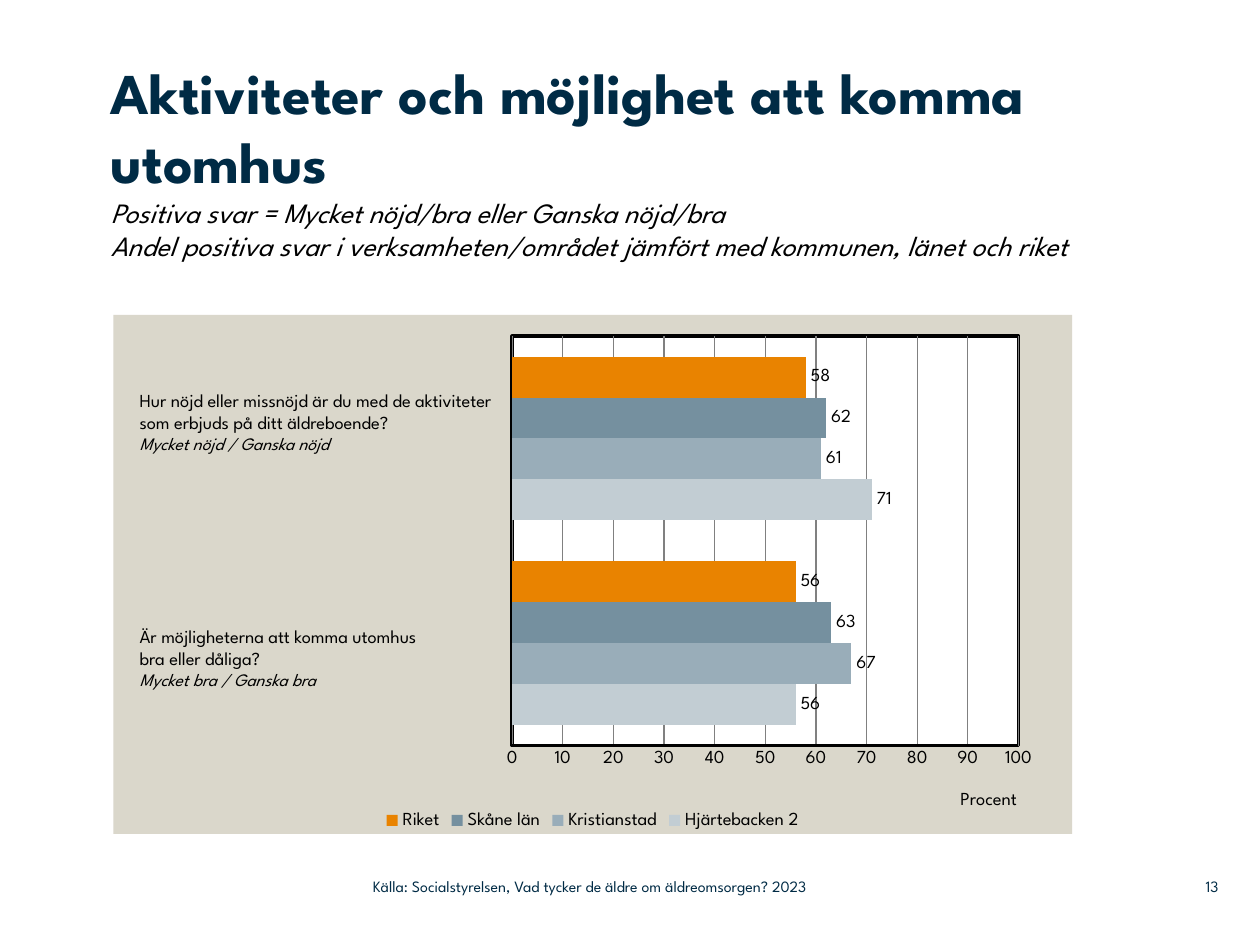
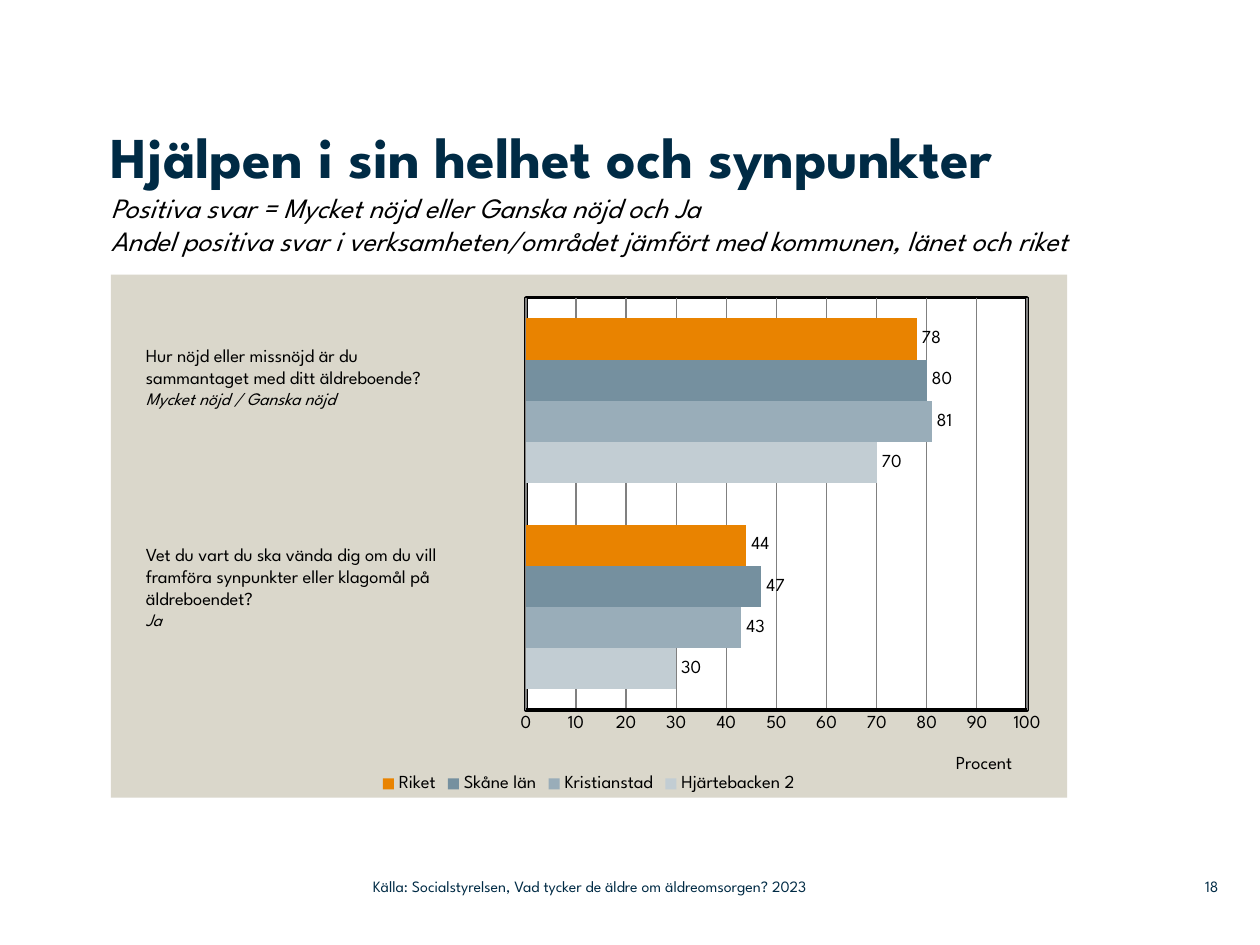
"""Builds two survey slides on elderly care, each with a bar chart."""
import pptx
import pptx.chart.data
import pptx.dml.color
import pptx.enum.chart
import pptx.enum.text
import pptx.oxml
import pptx.oxml.ns
import pptx.util

RGB = pptx.dml.color.RGBColor
NAVY = RGB(0x00, 0x2B, 0x45)
BLACK = RGB(0x00, 0x00, 0x00)
WHITE = RGB(0xFF, 0xFF, 0xFF)
SAND = RGB(0xDA, 0xD7, 0xCB)
GREY = RGB(0x80, 0x80, 0x80)
ORANGE = RGB(0xE9, 0x83, 0x00)
SLATE = RGB(0x75, 0x90, 0x9F)
STEEL = RGB(0x99, 0xAD, 0xB9)
MIST = RGB(0xC2, 0xCD, 0xD3)

FONT = "League Spartan"
AREAS = [("Hjärtebacken 2", MIST), ("Kristianstad", STEEL),
         ("Skåne län", SLATE), ("Riket", ORANGE)]
SOURCE = "Källa: Socialstyrelsen, Vad tycker de äldre om äldreomsorgen? 2023"
SCOPE = "Andel positiva svar i verksamheten/området jämfört med kommunen, länet och riket"
TOP = pptx.enum.text.MSO_ANCHOR.TOP
MID = pptx.enum.text.MSO_ANCHOR.MIDDLE
LEFT = pptx.enum.text.PP_ALIGN.LEFT
RIGHT = pptx.enum.text.PP_ALIGN.RIGHT

deck = pptx.Presentation()
deck.slide_width = pptx.util.Inches(10)
deck.slide_height = pptx.util.Inches(7.5)
COL = deck.slide_width / 100
ROW = deck.slide_height / 100


def place(box):
    """Turn a box in percent of the slide into lengths."""
    return [round(part * unit) for part, unit in zip(box, (COL, ROW, COL, ROW))]


def write(slide, box, lines, color=BLACK, anchor=TOP, align=LEFT, inset=0):
    """Add a text box; each line is its text, size and style letters."""
    frame = slide.shapes.add_textbox(*place(box)).text_frame
    frame.word_wrap = True
    frame.vertical_anchor = anchor
    frame.margin_left = frame.margin_right = pptx.util.Inches(inset)
    frame.margin_top = frame.margin_bottom = pptx.util.Inches(inset / 2)
    for num, (text, size, style) in enumerate(lines):
        para = frame.add_paragraph() if num else frame.paragraphs[0]
        para.alignment = align
        run = para.add_run()
        run.text = text
        run.font.name = FONT
        run.font.size = pptx.util.Pt(size)
        run.font.bold = "b" in style
        run.font.italic = "i" in style
        run.font.color.rgb = NAVY if "b" in style else color


PAGES = [
    {"page": "13",
     "title": "Aktiviteter och möjlighet att komma utomhus",
     "note": "Positiva svar = Mycket nöjd/bra eller Ganska nöjd/bra",
     "head": (8.8, 4.27, 78, 25.2),
     "chart": (9, 33.33, 76.1, 54.93),
     "plot": (0.416, 0.041, 0.528, 0.789),
     "vals": [(56, 71), (67, 61), (63, 62), (56, 58)],
     "asks": [
         ((10.1, 40.53, 30, 13.07),
          ["Hur nöjd eller missnöjd är du med de aktiviteter som erbjuds på ditt äldreboende?"],
          "Mycket nöjd / Ganska nöjd"),
         ((10.1, 65.47, 30.1, 10.8),
          ["Är möjligheterna att komma utomhus", "bra eller dåliga?"],
          "Mycket bra / Ganska bra")]},
    {"page": "18",
     "title": "Hjälpen i sin helhet och synpunkter",
     "note": "Positiva svar = Mycket nöjd eller Ganska nöjd och Ja",
     "head": (8.8, 11.07, 77.9, 17.87),
     "chart": (8.8, 29.07, 75.9, 55.33),
     "plot": (0.434, 0.044, 0.524, 0.789),
     "vals": [(30, 70), (43, 81), (47, 80), (44, 78)],
     "asks": [
         ((10.6, 35.73, 31, 10.8),
          ["Hur nöjd eller missnöjd är du", "sammantaget med ditt äldreboende?"],
          "Mycket nöjd / Ganska nöjd"),
         ((10.6, 56.8, 30.5, 10.8),
          ["Vet du vart du ska vända dig om du vill framföra synpunkter "
           "eller klagomål på äldreboendet?"],
          "Ja")]},
]

for page in PAGES:
    slide = deck.slides.add_slide(deck.slide_layouts[6])

    data = pptx.chart.data.CategoryChartData()
    data.categories = ["1", "2"]
    for (name, tint), vals in zip(AREAS, page["vals"]):
        data.add_series(name, vals)
    chart = slide.shapes.add_chart(pptx.enum.chart.XL_CHART_TYPE.BAR_CLUSTERED,
                                   *place(page["chart"]), data).chart
    chart.has_title = False
    chart.font.name = FONT
    chart.font.size = pptx.util.Pt(10.5)
    chart.font.color.rgb = BLACK
    chart.has_legend = True
    chart.legend.position = pptx.enum.chart.XL_LEGEND_POSITION.BOTTOM
    chart.legend.include_in_layout = False

    bars = chart.plots[0]
    bars.gap_width = 100
    bars.overlap = 0
    bars.vary_by_categories = False
    bars.has_data_labels = True
    bars.data_labels.show_value = True
    bars.data_labels.position = pptx.enum.chart.XL_LABEL_POSITION.OUTSIDE_END
    for bar, (name, tint) in zip(bars.series, AREAS):
        bar.format.fill.solid()
        bar.format.fill.fore_color.rgb = tint

    chart.category_axis.visible = False
    axis = chart.value_axis
    axis.minimum_scale, axis.maximum_scale, axis.major_unit = 0, 100, 10
    axis.major_tick_mark = pptx.enum.chart.XL_TICK_MARK.NONE
    axis.format.line.color.rgb = BLACK
    axis.format.line.width = pptx.util.Pt(2)
    axis.major_gridlines.format.line.color.rgb = GREY
    axis.major_gridlines.format.line.width = pptx.util.Pt(0.75)
    axis.axis_title.text_frame.text = "Procent"
    font = axis.axis_title.text_frame.paragraphs[0].runs[0].font
    font.name, font.size, font.bold = FONT, pptx.util.Pt(10.5), False
    font.color.rgb = BLACK

    area = chart._chartSpace.chart.plotArea
    space = pptx.oxml.ns.nsdecls("c", "a")
    fill = '<a:solidFill><a:srgbClr val="{}"/></a:solidFill>'
    edge = f'<a:ln w="25400">{fill.format(str(BLACK))}</a:ln>'
    area.append(pptx.oxml.parse_xml(
        f'<c:spPr {space}>{fill.format(str(WHITE))}{edge}</c:spPr>'))
    area.getparent().addnext(pptx.oxml.parse_xml(
        f'<c:spPr {space}>{fill.format(str(SAND))}<a:ln><a:noFill/></a:ln></c:spPr>'))

    label = axis.axis_title._element
    for part in (area, label):
        for old in part.findall(pptx.oxml.ns.qn("c:layout")):
            part.remove(old)
    sides = "".join(f'<c:{key} val="{val}"/>' for key, val in zip("xywh", page["plot"]))
    modes = '<c:xMode val="edge"/><c:yMode val="edge"/>'
    area.insert(0, pptx.oxml.parse_xml(
        f'<c:layout {space}><c:manualLayout><c:layoutTarget val="inner"/>'
        f'{modes}{sides}</c:manualLayout></c:layout>'))
    label.find(pptx.oxml.ns.qn("c:tx")).addnext(pptx.oxml.parse_xml(
        f'<c:layout {space}><c:manualLayout>{modes}<c:x val="0.88"/>'
        f'<c:y val="0.91"/></c:manualLayout></c:layout>'))

    write(slide, page["head"], [(page["title"], 33, "b"), (page["note"], 16, "i"),
                                (SCOPE, 16, "i")], anchor=MID)
    for box, lines, reply in page["asks"]:
        write(slide, box, [(line, 10.5, "") for line in lines] + [(reply, 10, "i")],
              inset=0.1)
    write(slide, (92, 91.87, 4.7, 3.87), [(page["page"], 9, "")],
          color=NAVY, anchor=MID, align=RIGHT)
    write(slide, (29.6, 91.87, 44.3, 3.87), [(SOURCE, 9, "")], color=NAVY, anchor=MID)

deck.save("out.pptx")
